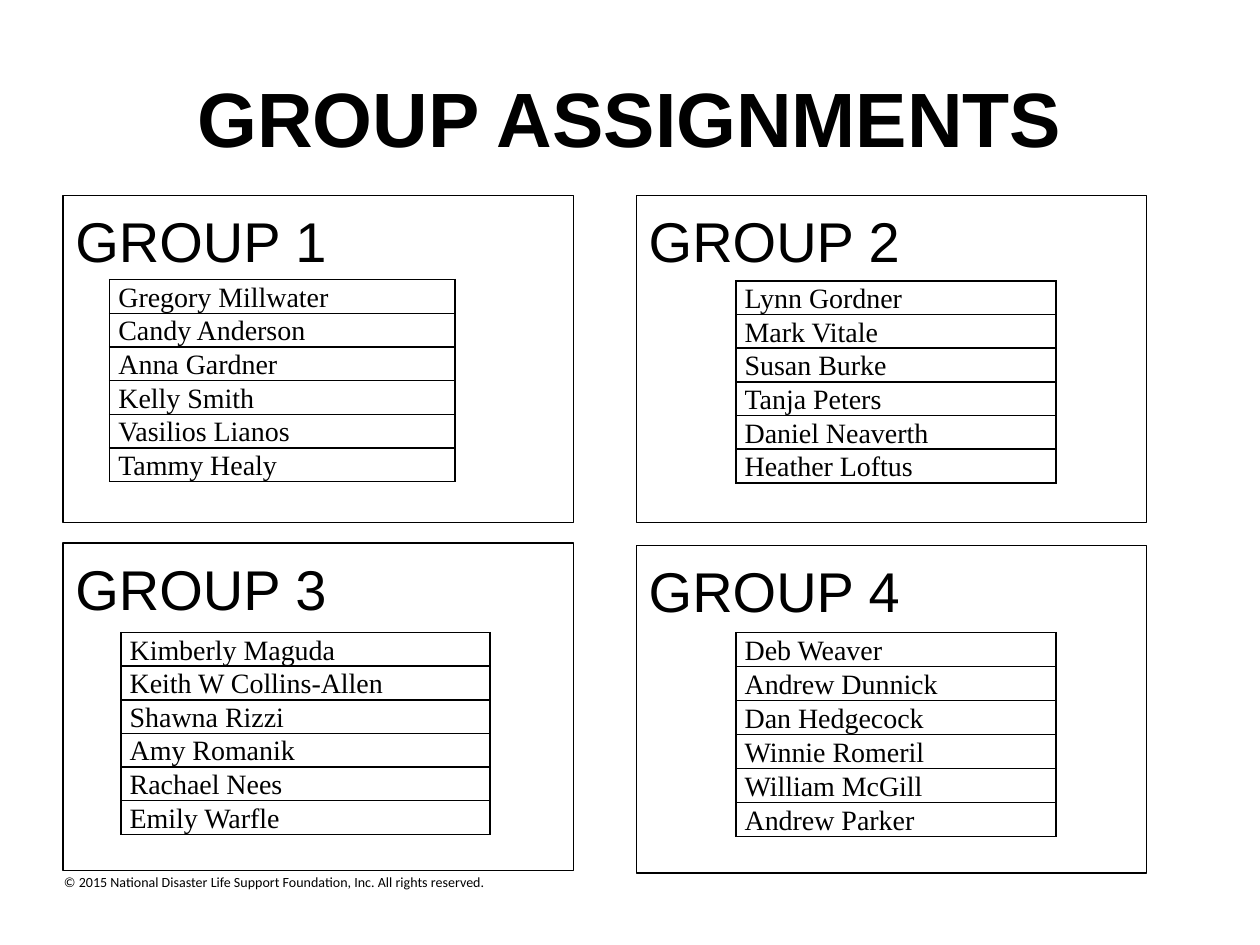
from lxml import etree
from pptx import Presentation
from pptx.dml.color import RGBColor
from pptx.enum.shapes import MSO_SHAPE
from pptx.enum.text import MSO_ANCHOR, PP_ALIGN
from pptx.oxml import parse_xml
from pptx.oxml.ns import nsdecls
from pptx.util import Inches, Pt

RECT = MSO_SHAPE.RECTANGLE
TOP, MIDDLE, BOTTOM = MSO_ANCHOR.TOP, MSO_ANCHOR.MIDDLE, MSO_ANCHOR.BOTTOM
LEFT, CENTER = PP_ALIGN.LEFT, PP_ALIGN.CENTER
BLACK = "000000"
WIDTH, HEIGHT = 4.05, 2.6

GROUPS = [
    ("GROUP 1", (0.5, 1.55), (0.37, 0.67, 2.74), 0.21,
     ["Gregory Millwater", "Candy Anderson", "Anna Gardner",
      "Kelly Smith", "Vasilios Lianos", "Tammy Healy"]),
    ("GROUP 2", (5.05, 1.55), (0.79, 0.68, 2.54), 0.21,
     ["Lynn Gordner", "Mark Vitale", "Susan Burke",
      "Tanja Peters", "Daniel Neaverth", "Heather Loftus"]),
    ("GROUP 3", (0.5, 4.31), (0.46, 0.71, 2.93), 0.21,
     ["Kimberly Maguda", "Keith W Collins-Allen", "Shawna Rizzi",
      "Amy Romanik", "Rachael Nees", "Emily Warfle"]),
    ("GROUP 4", (5.05, 4.33), (0.79, 0.69, 2.54), 0.27,
     ["Deb Weaver", "Andrew Dunnick", "Dan Hedgecock",
      "Winnie Romeril", "William McGill", "Andrew Parker"]),
]


def paint(code):
    """Turn a hex string into a colour."""
    return RGBColor.from_string(code)


def write(frame, text, size, font="Arial", bold=False, align=LEFT, anchor=TOP):
    """Put one formatted paragraph into a text frame."""
    frame.word_wrap = True
    frame.vertical_anchor = anchor
    para = frame.paragraphs[0]
    para.alignment = align
    run = para.add_run()
    run.text = text
    run.font.size = Pt(size)
    run.font.name = font
    run.font.bold = bold
    run.font.color.rgb = paint(BLACK)


def label(slide, box, text, **style):
    """Add a text box at the given box."""
    shape = slide.shapes.add_textbox(*map(Inches, box))
    write(shape.text_frame, text, **style)


def border(cell):
    """Draw a thin black line on each side of a cell."""
    props = cell._tc.get_or_add_tcPr()
    for spot, side in enumerate(("lnL", "lnR", "lnT", "lnB")):
        line = parse_xml(f'<a:{side} {nsdecls("a")} w="{Pt(1)}"/>')
        fill = etree.SubElement(line, f"{{{line.nsmap['a']}}}solidFill")
        etree.SubElement(fill, f"{{{line.nsmap['a']}}}srgbClr", val=BLACK)
        props.insert(spot, line)


def roster(slide, box, names):
    """Add a one-column table of names at the given box."""
    left, top, width, row = box
    place = map(Inches, (left, top, width, row * len(names)))
    table = slide.shapes.add_table(len(names), 1, *place).table
    table.first_row = table.horz_banding = False
    for index, name in enumerate(names):
        table.rows[index].height = Inches(row)
        cell = table.cell(index, 0)
        cell.margin_left = cell.margin_right = Inches(0.07)
        cell.margin_top = cell.margin_bottom = 0
        cell.fill.background()
        border(cell)
        write(cell.text_frame, name, 16, font="Times New Roman")
        cell.vertical_anchor = BOTTOM


def panel(slide, box, title, inner, row, names):
    """Add a framed group with its heading and its roster."""
    left, top, width, height = box
    shape = slide.shapes.add_shape(RECT, *map(Inches, box))
    shape.shadow.inherit = False
    shape.fill.background()
    shape.line.color.rgb = paint(BLACK)
    shape.line.width = Pt(0.75)
    shape.text_frame.margin_top = Inches(0.09)
    write(shape.text_frame, title, 32)
    across, down, wide = inner
    roster(slide, (left + across, top + down, wide, row), names)


def main():
    """Build the slide and save it."""
    deck = Presentation()
    deck.slide_width, deck.slide_height = Inches(10), Inches(7.5)
    slide = deck.slides.add_slide(deck.slide_layouts[6])
    label(slide, (0, 6.88, 4.36, 0.24),
          "© 2015 National Disaster Life Support Foundation, Inc. "
          "All rights reserved.", size=8, font="Calibri", align=CENTER)
    label(slide, (0.5, 0.3, 9, 1.25), "GROUP ASSIGNMENTS",
          size=44, bold=True, align=CENTER, anchor=MIDDLE)
    for title, spot, inner, row, names in GROUPS:
        panel(slide, (*spot, WIDTH, HEIGHT), title, inner, row, names)
    deck.save("out.pptx")


if __name__ == "__main__":
    main()
